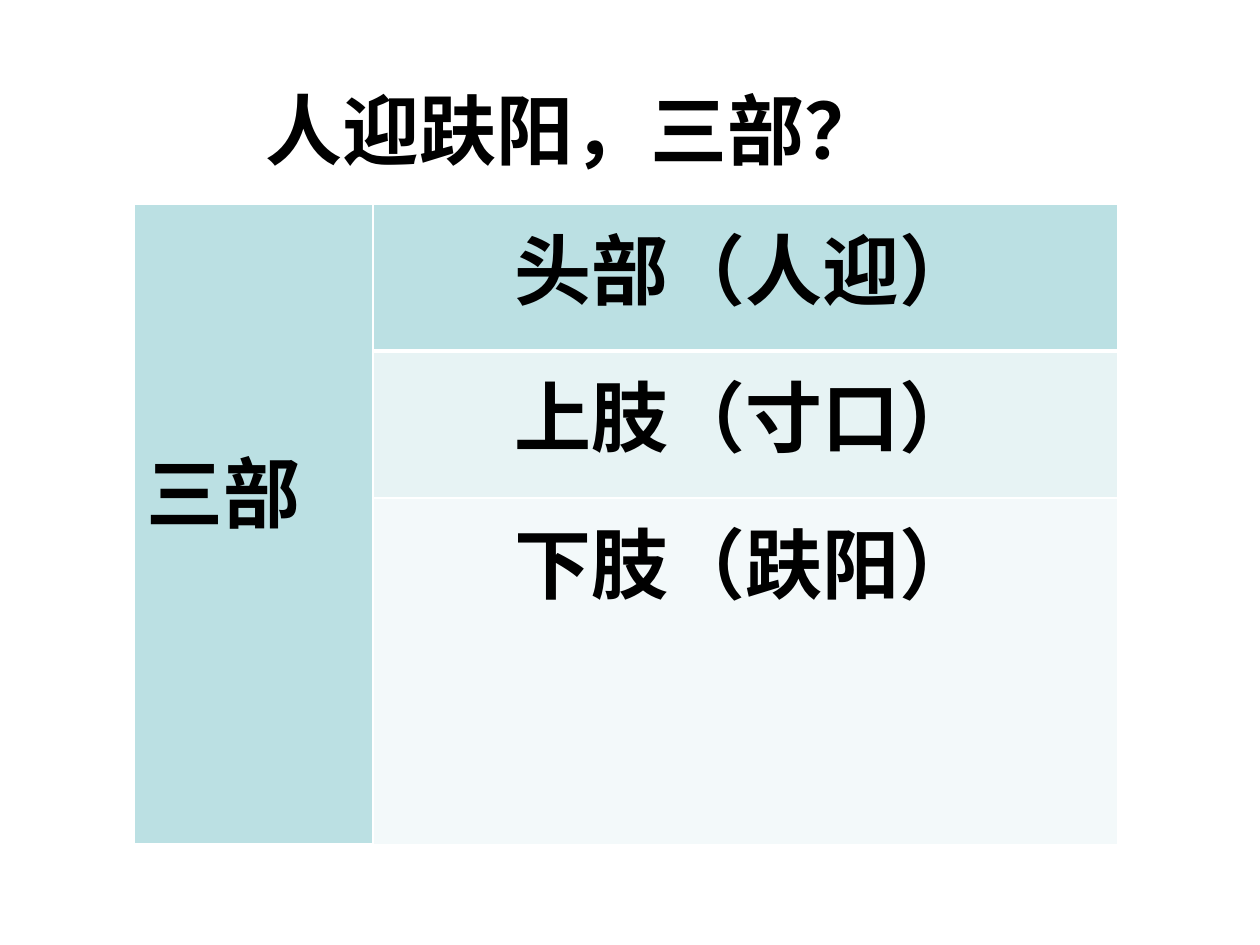
from dataclasses import dataclass

from lxml import etree
from pptx import Presentation
from pptx import util as u
from pptx.dml.color import RGBColor
from pptx.enum import text
from pptx.oxml.ns import qn

PX = u.Inches(1) / 126
FONT = {"name": "Noto Sans CJK SC", "size": u.Pt(44), "bold": True}
BLACK, WHITE, TEAL = "000000", "FFFFFF", "BBE0E3"

COLUMNS = (239, 745)
ROW_HEIGHT = 147
LABEL_TOP = 229  # two text lines above the label


@dataclass
class Part:
    label: str
    fill: str
    bottom_line: int = 1


PARTS = (
    Part("头部（人迎）", TEAL, bottom_line=3),
    Part("上肢（寸口）", "E7F3F4"),
    Part("下肢（趺阳）", "F3F9FA"),
)
GROUP = Part("三部", TEAL, bottom_line=3)


def px(n: int) -> u.Emu:
    return u.Emu(round(n * PX))


def color(value: str) -> RGBColor:
    return RGBColor.from_string(value)


def write(tf, words: str, align=text.PP_ALIGN.LEFT) -> None:
    p = tf.paragraphs[0]
    p.alignment = align
    r = p.add_run()
    r.text = words
    for name, value in FONT.items():
        setattr(r.font, name, value)
    r.font.color.rgb = color(BLACK)
    ea = etree.SubElement(r.font._element, qn("a:ea"))
    ea.set("typeface", FONT["name"])


def add_borders(cell, bottom_line: int) -> None:
    tc_pr = cell._tc.get_or_add_tcPr()
    for side, points in (("L", 1), ("R", 1), ("T", 1), ("B", bottom_line)):
        ln = etree.SubElement(tc_pr, qn(f"a:ln{side}"), w=str(u.Pt(points)))
        fill = etree.SubElement(ln, qn("a:solidFill"))
        etree.SubElement(fill, qn("a:srgbClr"), val=WHITE)


def fill_cell(cell, part: Part, align) -> None:
    add_borders(cell, part.bottom_line)
    cell.fill.solid()
    cell.fill.fore_color.rgb = color(part.fill)
    write(cell.text_frame, part.label, align)


def add_title(slide, words: str) -> None:
    tf = slide.shapes.add_textbox(px(253), px(76), px(645), px(106)).text_frame
    tf.word_wrap = True
    tf.auto_size = text.MSO_AUTO_SIZE.SHAPE_TO_FIT_TEXT
    write(tf, words)


def add_parts_table(slide) -> None:
    table = slide.shapes.add_table(
        len(PARTS), len(COLUMNS), px(134), px(204),
        px(sum(COLUMNS)), px(ROW_HEIGHT * len(PARTS)),
    ).table
    table.first_row = table.horz_banding = False
    for column, width in zip(table.columns, COLUMNS):
        column.width = px(width)
    for row in table.rows:
        row.height = px(ROW_HEIGHT)

    group = table.cell(0, 0)
    group.merge(table.cell(len(PARTS) - 1, 0))
    group.margin_top = px(LABEL_TOP)
    fill_cell(group, GROUP, text.PP_ALIGN.LEFT)
    for i, part in enumerate(PARTS):
        fill_cell(table.cell(i, 1), part, text.PP_ALIGN.CENTER)


def main() -> None:
    prs = Presentation()
    prs.slide_width, prs.slide_height = px(1260), px(945)
    slide = prs.slides.add_slide(prs.slide_layouts[6])
    add_parts_table(slide)
    add_title(slide, "人迎趺阳，三部？")
    prs.save("out.pptx")


if __name__ == "__main__":
    main()
